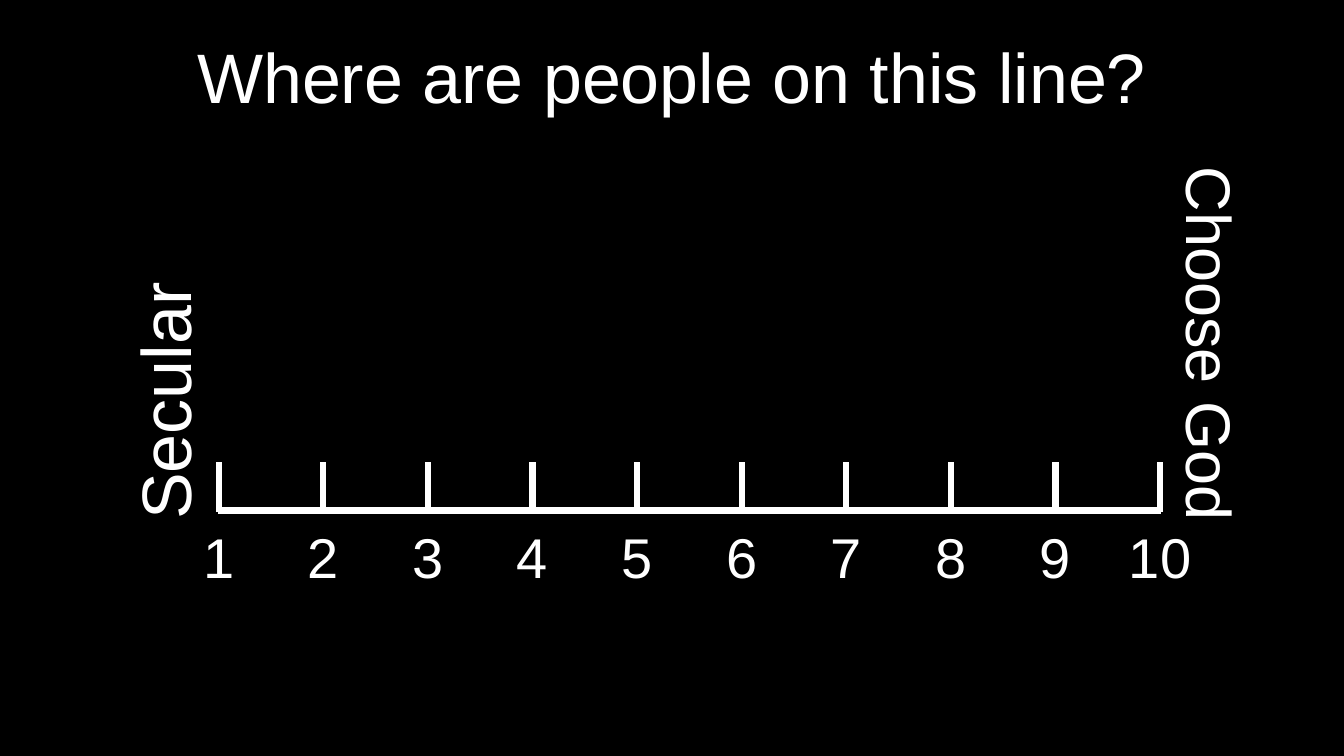
from dataclasses import dataclass

from lxml.etree import SubElement
from pptx import Presentation
from pptx.dml.color import RGBColor as RGB
from pptx.enum.shapes import MSO_CONNECTOR as CONNECTOR
from pptx.enum.text import MSO_ANCHOR as ANCHOR, PP_ALIGN as ALIGN
from pptx.oxml.ns import qn
from pptx.util import Inches, Pt


@dataclass(frozen=True)
class Theme:
    back: RGB = RGB(0, 0, 0)
    ink: RGB = RGB(255, 255, 255)
    font: str = "Arial"
    large: int = 100
    medium: int = 90
    small: int = 80
    stroke: int = 9


class ScaleSlide:
    """Grid: column n stands at scale value n; 15 rows fill the height."""

    first, last = 1, 10

    def __init__(self, prs, theme):
        self.theme = theme
        self.s = prs.slides.add_slide(prs.slide_layouts[6])
        fill = self.s.background.fill
        fill.solid()
        fill.fore_color.rgb = theme.back
        self.row = prs.slide_height / 15
        self.left = 4.34 * self.row
        self.col = (23.02 * self.row - self.left) / (self.last - self.first)

    def point(self, col, row):
        return round(self.left + (col - self.first) * self.col), round(row * self.row)

    def line(self, start, end):
        c = self.s.shapes.add_connector(
            CONNECTOR.STRAIGHT, *self.point(*start), *self.point(*end))
        c.line.color.rgb = self.theme.ink
        c.line.width = Pt(self.theme.stroke)
        SubElement(c._element.spPr, qn("a:effectLst"))

    def label(self, text, centre, length, size, rotation=0):
        """Text box around a grid point; its length is in row heights."""
        x, y = self.point(*centre)
        w, h = round(length * self.row), round(1.96 * self.row)
        box = self.s.shapes.add_textbox(x - w // 2, y - h // 2, w, h)
        box.rotation = rotation
        tf = box.text_frame
        pad = Inches(0.08)
        frame = dict(word_wrap=True, vertical_anchor=ANCHOR.BOTTOM, margin_left=pad,
                     margin_right=pad, margin_top=pad, margin_bottom=pad)
        for name, value in frame.items():
            setattr(tf, name, value)
        p = tf.paragraphs[0]
        p.alignment = ALIGN.CENTER
        r = p.add_run()
        r.text = text
        for name, value in dict(name=self.theme.font, size=Pt(size)).items():
            setattr(r.font, name, value)
        r.font.color.rgb = self.theme.ink


def main():
    prs = Presentation()
    prs.slide_width, prs.slide_height = Inches(26.67), Inches(15)
    theme = Theme()
    scale = ScaleSlide(prs, theme)

    # Title
    scale.label("Where are people on this line?", (5.33, 1.44), 25.65, theme.large)

    # Number line with ticks and values
    scale.line((scale.first - 0.01, 10.13), (scale.last + 0.01, 10.13))
    for value in range(scale.first, scale.last + 1):
        scale.line((value, 10.16), (value, 9.16))
        scale.label(str(value), (value, 10.81), 1.48, theme.small)

    # Names of the two ends
    scale.label("Secular", (0.44, 7.96), 5.91, theme.large, 270)
    scale.label("Choose God", (10.57, 6.82), 8.25, theme.medium, 90)

    prs.save("out.pptx")


if __name__ == "__main__":
    main()
